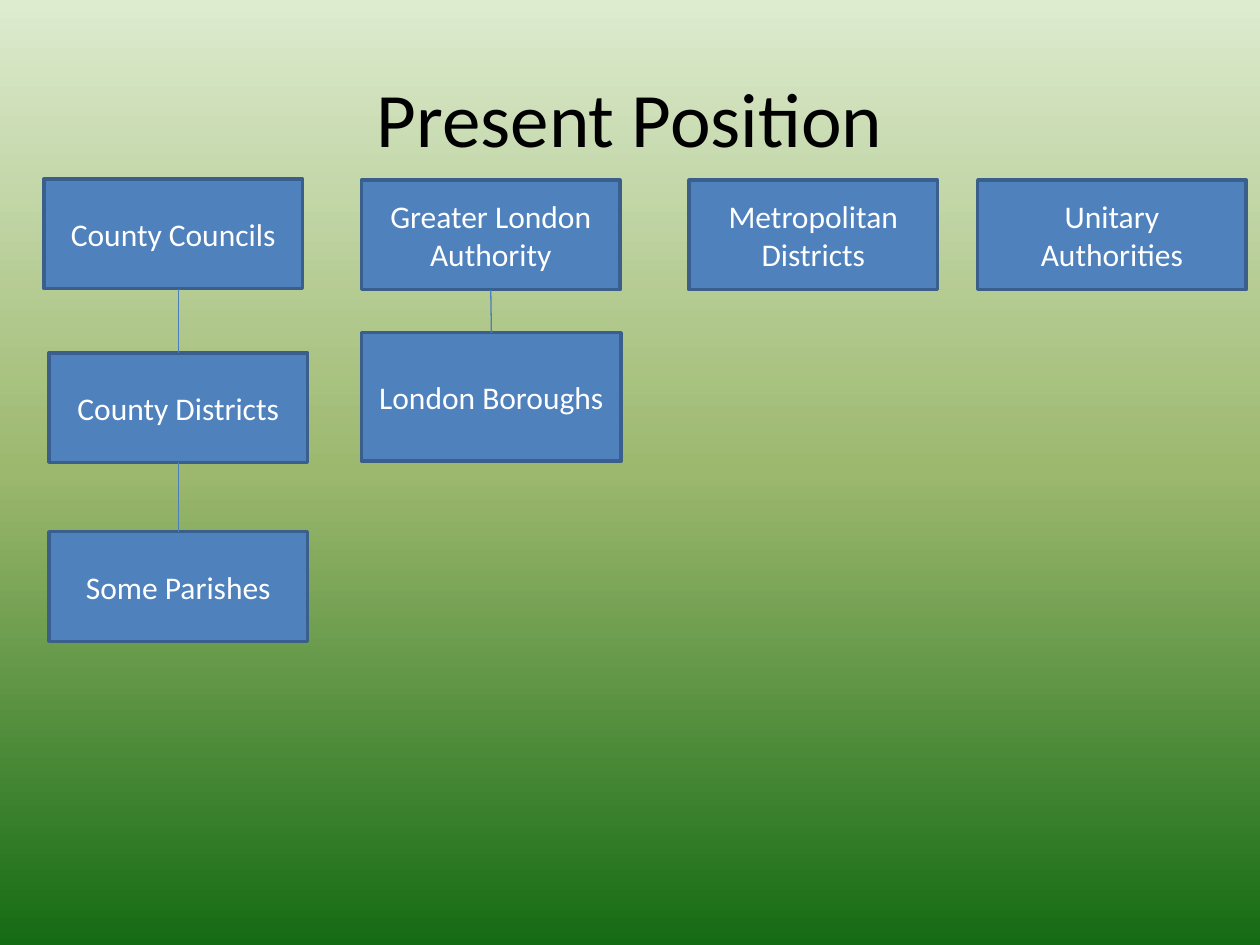
from copy import deepcopy

from pptx import Presentation
from pptx.dml.color import RGBColor
from pptx.enum.shapes import MSO_CONNECTOR, MSO_SHAPE
from pptx.enum.text import MSO_ANCHOR, PP_ALIGN
from pptx.oxml import parse_xml
from pptx.oxml.ns import nsdecls, qn
from pptx.util import Pt

TITLE = ("Present Position", (36, 21.6, 648, 90))
TOP, HEIGHT, WIDTH = 102.96, 62.64, 147.6
DISTRICT_LEFT = 28.08
BOXES = {
    "Greater London Authority": (206.64, TOP, WIDTH, HEIGHT),
    "London Boroughs": (206.64, 190.08, 148.32, 73.44),
    "Unitary Authorities": (558.72, TOP, 153.36, HEIGHT),
    "Metropolitan Districts": (393.84, TOP, 141.84, HEIGHT),
    "County Councils": (25.2, 102.24, WIDTH, HEIGHT),
    "County Districts": (DISTRICT_LEFT, 201.6, WIDTH, HEIGHT),
    "Some Parishes": (DISTRICT_LEFT, 303.84, WIDTH, HEIGHT),
}
LINKS = [
    ("County Councils", "County Districts"),
    ("Greater London Authority", "London Boroughs"),
    ("County Districts", "Some Parishes"),
]
THEME = {
    "background": [(0, "DDEBCF"), (0.5, "9CB86E"), (1, "156B13")],
    "box": "4F81BD",
    "border": ("3A5F8C", 2),
    "link": ("4B7EBC", 0.75),
    "title": {"name": "Calibri", "size": Pt(44), "color": "000000"},
    "label": {"name": "Calibri", "size": Pt(18), "color": "FFFFFF"},
}


def rgb(value):
    return RGBColor.from_string(value)


def paint_background(s):
    fill = s.background.fill
    fill.gradient()
    fill.gradient_angle = 270
    stops = next(s._element.iter(qn("a:gsLst")))
    stops.append(deepcopy(stops[-1]))
    for stop, (position, color) in zip(fill.gradient_stops, THEME["background"]):
        stop.position = position
        stop.color.rgb = rgb(color)


def write(sp, text, style):
    tf = sp.text_frame
    tf.word_wrap = True
    tf.vertical_anchor = MSO_ANCHOR.MIDDLE
    p = tf.paragraphs[0]
    p.alignment = PP_ALIGN.CENTER
    r = p.add_run()
    r.text = text
    for key, value in style.items():
        if key == "color":
            r.font.color.rgb = rgb(value)
        else:
            setattr(r.font, key, value)


def set_line(sp, style):
    color, width = style
    sp.line.color.rgb = rgb(color)
    sp.line.width = Pt(width)


def add_box(s, text, place):
    sp = s.shapes.add_shape(MSO_SHAPE.RECTANGLE, *map(Pt, place))
    sp.shadow.inherit = False
    sp.fill.solid()
    sp.fill.fore_color.rgb = rgb(THEME["box"])
    set_line(sp, THEME["border"])
    write(sp, text, THEME["label"])
    return sp


def add_link(s, upper, lower):
    x = lower.left + lower.width // 2
    cx = s.shapes.add_connector(
        MSO_CONNECTOR.STRAIGHT, x, upper.top + upper.height, x, lower.top
    )
    if upper.left == lower.left:
        cx.begin_connect(upper, 2)
    cx.end_connect(lower, 0)
    set_line(cx, THEME["link"])
    cx._element.spPr.append(parse_xml(f"<a:effectLst {nsdecls('a')}/>"))


def main():
    prs = Presentation()
    prs.slide_width, prs.slide_height = Pt(720), Pt(540)
    s = prs.slides.add_slide(prs.slide_layouts[5])
    paint_background(s)

    text, place = TITLE
    title = s.shapes.title
    for key, value in zip(("left", "top", "width", "height"), place):
        setattr(title, key, Pt(value))
    write(title, text, THEME["title"])

    boxes = {name: add_box(s, name, place) for name, place in BOXES.items()}
    for upper, lower in LINKS:
        add_link(s, boxes[upper], boxes[lower])
    prs.save("out.pptx")


if __name__ == "__main__":
    main()
